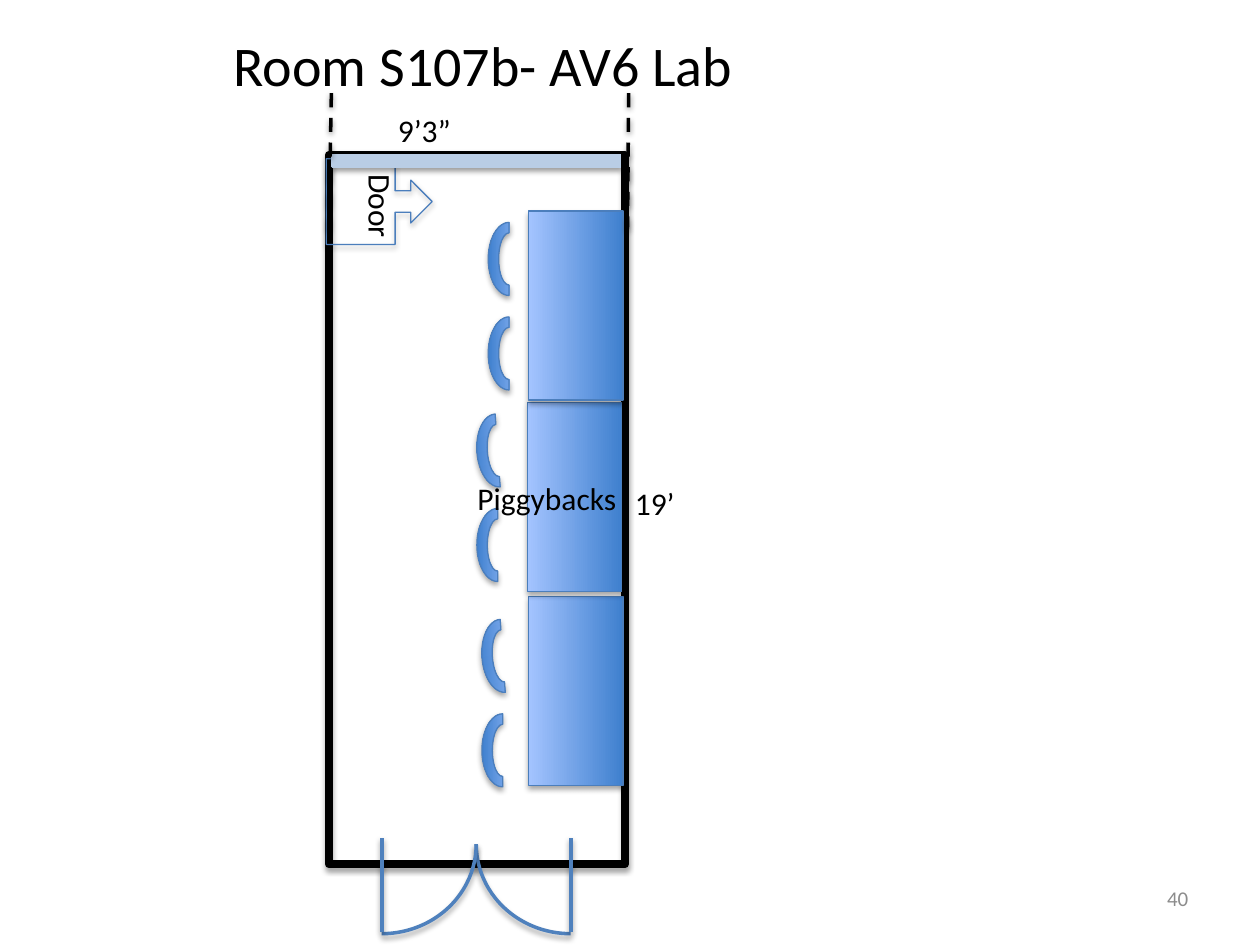
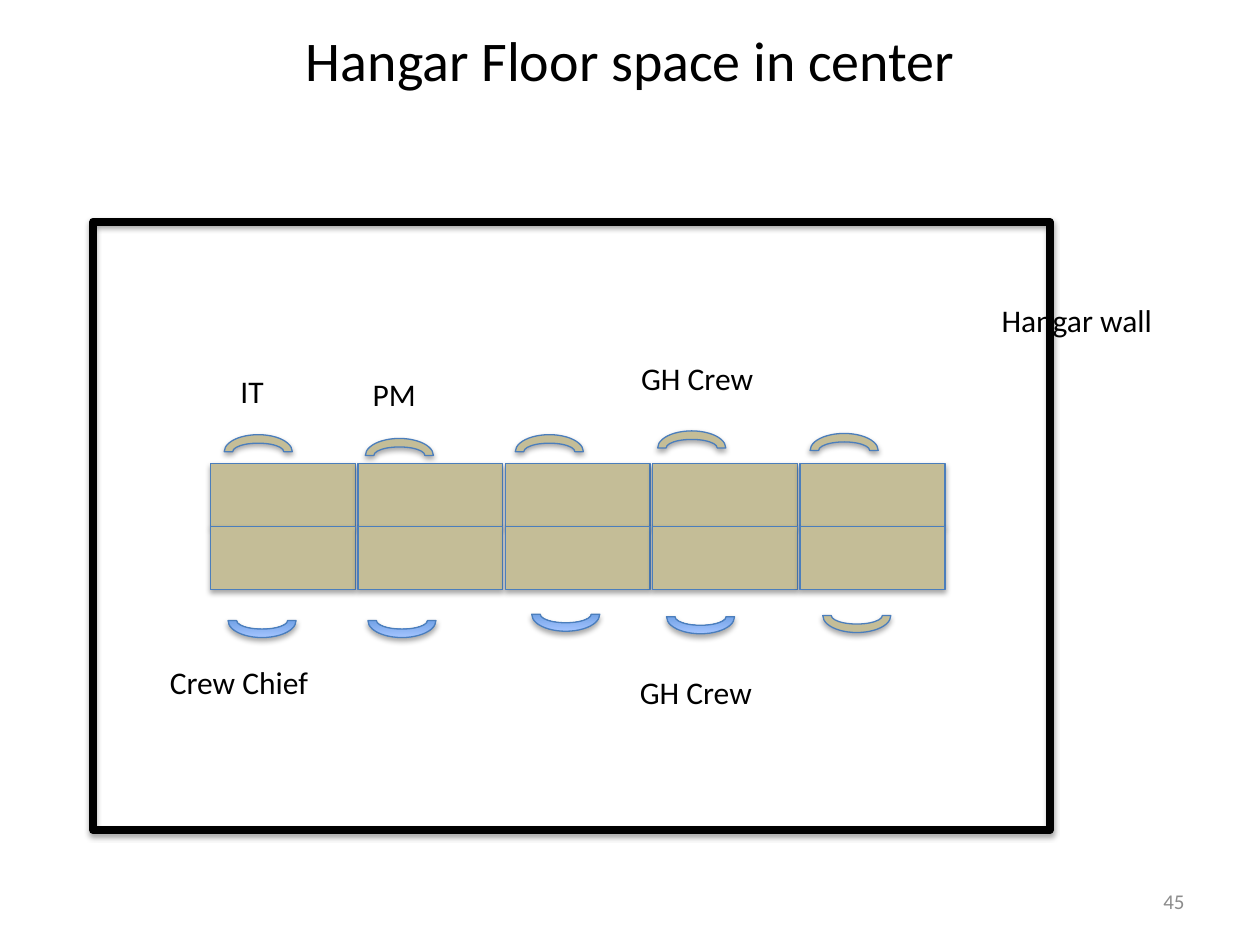
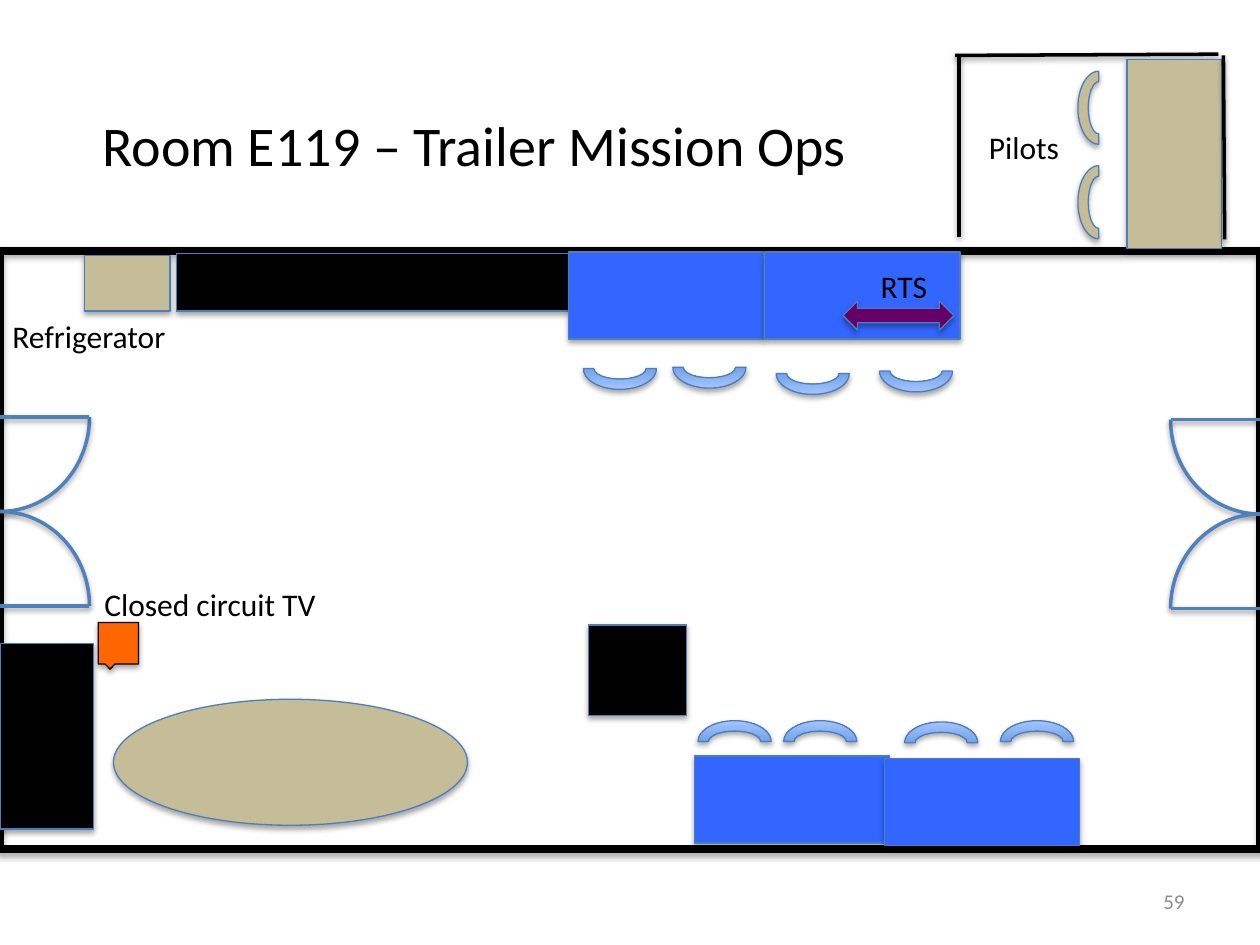
"""Build three floor-plan slides: AV6 lab, hangar floor and trailer mission ops."""
from collections import namedtuple

from lxml.etree import SubElement
from pptx import Presentation
from pptx.dml.color import RGBColor
from pptx.enum.dml import MSO_LINE
from pptx.enum.shapes import MSO_CONNECTOR, MSO_SHAPE
from pptx.enum.text import MSO_ANCHOR, MSO_AUTO_SIZE, PP_ALIGN
from pptx.oxml.ns import qn
from pptx.util import Pt

PX = 9144
FONT = "Calibri"
BLACK = RGBColor(0x00, 0x00, 0x00)
GREY = RGBColor(0x8C, 0x8C, 0x8C)
OUTLINE = RGBColor(0x4B, 0x7E, 0xBC)
DOOR_BLUE = RGBColor(0x4F, 0x81, 0xBD)
PALE_BLUE = RGBColor(0xB9, 0xCD, 0xE5)
DARK_BLUE = RGBColor(0x3F, 0x80, 0xCE)
LIGHT_BLUE = RGBColor(0xA4, 0xC4, 0xFF)
DESK_BLUE = RGBColor(0x33, 0x66, 0xFF)
TAN = RGBColor(0xC4, 0xBD, 0x97)
ORANGE = RGBColor(0xFF, 0x66, 0x00)
PURPLE = RGBColor(0x66, 0x00, 0x66)

Gradient = namedtuple("Gradient", "start end angle")
LIGHT_TOP = Gradient(DARK_BLUE, LIGHT_BLUE, 90)
DARK_TOP = Gradient(LIGHT_BLUE, DARK_BLUE, 90)

LARGE_CHAIR = (58, 33)
SMALL_CHAIR = (54, 27)
FACING_UP, FACING_DOWN, FACING_LEFT = 0, 180, 270
BOTTOM_RIGHT, BOTTOM_LEFT, TOP_LEFT, TOP_RIGHT = range(4)
QUARTER_TURN = 54


def scaled(*lengths):
    """Turn px lengths into EMU."""
    return [length * PX for length in lengths]


def cast_shadow(shape, alpha, distance):
    """Give a shape or connector a soft shadow below it."""
    effects = SubElement(shape._element.spPr, qn("a:effectLst"))
    shadow = SubElement(effects, qn("a:outerShdw"), blurRad="40000", dist=str(distance),
                        dir="5400000", rotWithShape="0")
    color = SubElement(shadow, qn("a:srgbClr"), val=str(BLACK))
    SubElement(color, qn("a:alpha"), val=str(alpha * 1000))


def paint(shape, fill):
    """Fill a shape with a colour, a gradient or nothing."""
    if fill is None:
        shape.fill.background()
    elif isinstance(fill, Gradient):
        shape.fill.gradient()
        shape.fill.gradient_angle = fill.angle
        for stop, color in zip(shape.fill.gradient_stops, fill):
            stop.color.rgb = color
    else:
        shape.fill.solid()
        shape.fill.fore_color.rgb = fill


def add_item(slide, box, fill=None, kind=MSO_SHAPE.RECTANGLE, turn=0, line=OUTLINE, weight=0.75):
    """Draw one preset shape with an outline and a shadow."""
    shape = slide.shapes.add_shape(kind, *scaled(*box))
    shape.rotation = turn
    paint(shape, fill)
    shape.line.color.rgb = line
    shape.line.width = Pt(weight)
    cast_shadow(shape, 35, 23000)
    return shape


def add_walls(slide, *box):
    """Draw the heavy outline of a room."""
    add_item(slide, box, line=BLACK, weight=4.5)


def add_chairs(slide, places, size, fill, turn):
    """Draw equal chairs at the given left and top places."""
    for place in places:
        add_item(slide, (*place, *size), fill, MSO_SHAPE.BLOCK_ARC, turn)


def add_line(slide, start, end, color=BLACK, weight=2, dash=None):
    """Draw a straight line with a shadow."""
    line = slide.shapes.add_connector(MSO_CONNECTOR.STRAIGHT, *scaled(*start, *end))
    line.line.color.rgb = color
    line.line.width = Pt(weight)
    if dash:
        line.line.dash_style = dash
    cast_shadow(line, 38, 20000)


def add_door_leaf(slide, box, quadrant, start, end):
    """Draw a door leaf and the quarter circle of its swing."""
    swing = add_item(slide, box, None, MSO_SHAPE.ARC, line=DOOR_BLUE, weight=2)
    swing.adjustments[0] = quadrant * QUARTER_TURN
    swing.adjustments[1] = (quadrant + 1) % 4 * QUARTER_TURN
    add_line(slide, start, end, DOOR_BLUE)


def add_text(slide, text, box, size, color=BLACK, align=PP_ALIGN.LEFT, wrap=True):
    """Place one paragraph of text and return its box."""
    shape = slide.shapes.add_textbox(*scaled(*box))
    frame = shape.text_frame
    frame.word_wrap = wrap
    paragraph = frame.paragraphs[0]
    paragraph.text = text
    paragraph.alignment = align
    paragraph.font.name = FONT
    paragraph.font.size = Pt(size)
    paragraph.font.color.rgb = color
    return shape


def add_label(slide, text, left, top, width, wrap=False, turn=0):
    """Name a part of the plan."""
    shape = add_text(slide, text, (left, top, width, 40), 18, wrap=wrap)
    shape.text_frame.auto_size = MSO_AUTO_SIZE.SHAPE_TO_FIT_TEXT
    shape.rotation = turn


def add_title(slide, text, *box):
    """Place the centred slide title."""
    shape = add_text(slide, text, box, 32, align=PP_ALIGN.CENTER)
    shape.text_frame.vertical_anchor = MSO_ANCHOR.MIDDLE


def add_page_number(slide, number, left=717, top=695):
    """Place the grey page number at the lower right."""
    shape = add_text(slide, number, (left, top, 233, 40), 12, GREY, PP_ALIGN.RIGHT)
    shape.text_frame.vertical_anchor = MSO_ANCHOR.MIDDLE


def build_lab(slide):
    """Draw the narrow lab with three desks along one wall."""
    add_title(slide, "Room S107b- AV6 Lab", 0, -10, 767, 122)
    add_walls(slide, 261, 123, 235, 563)
    for left, top in ((382, 511), (381, 357), (382, 205)):
        add_item(slide, (left, top, 150, 75), LIGHT_TOP, turn=FACING_LEFT)
    add_chairs(slide, ((366, 341), (370, 504)), LARGE_CHAIR, DARK_TOP, 266)
    add_chairs(slide, ((366, 416), (375, 189), (375, 264), (370, 579)),
               LARGE_CHAIR, DARK_TOP, FACING_LEFT)
    for hinge, quadrant in ((453, BOTTOM_LEFT), (303, BOTTOM_RIGHT)):
        add_door_leaf(slide, (hinge - 75, 599, 150, 142), quadrant, (hinge, 740), (hinge, 665))
    add_label(slide, "9’3”", 306, 83, 63)
    add_label(slide, "Piggybacks", 369, 375, 132)
    add_label(slide, "19’", 494, 379, 52)
    add_item(slide, (267, 118, 68, 84), None, MSO_SHAPE.UP_ARROW_CALLOUT, 90)
    add_label(slide, "Door", 267, 144, 71, turn=90)
    add_page_number(slide, "40", 720, 693)
    add_line(slide, (263, 128), (493, 128), PALE_BLUE, 8)
    for top_x, bottom_x in ((263, 261), (499, 498)):
        add_line(slide, (top_x, 74), (bottom_x, 182), dash=MSO_LINE.DASH)


def build_hangar(slide):
    """Draw the hangar with two rows of five desks."""
    add_title(slide, "Hangar Floor space in center", 88, 0, 825, 94)
    add_walls(slide, 74, 176, 759, 483)
    add_chairs(slide, ((178, 345), (290, 348), (409, 345), (522, 342), (643, 344)),
               SMALL_CHAIR, TAN, FACING_UP)
    for top in (368, 418):
        for column in range(5):
            add_item(slide, (167 + 117 * column, top, 115, 50), TAN)
    add_chairs(slide, ((181, 479), (292, 479), (422, 474), (529, 476)),
               SMALL_CHAIR, LIGHT_TOP, FACING_DOWN)
    add_chairs(slide, ((653, 475),), SMALL_CHAIR, TAN, FACING_DOWN)
    add_label(slide, "IT", 181, 290, 69, wrap=True)
    add_label(slide, "PM", 286, 293, 85, wrap=True)
    add_label(slide, "GH Crew", 499, 280, 206, wrap=True)
    add_label(slide, "GH Crew", 498, 529, 206, wrap=True)
    add_label(slide, "Crew Chief", 125, 521, 132)
    add_label(slide, "Hangar wall", 785, 234, 141)
    add_page_number(slide, "45")


def build_trailer(slide):
    """Draw the trailer with its pilots' corner, desks and double doors."""
    add_title(slide, "Room E119 – Trailer Mission Ops", 0, 52, 753, 124)
    add_walls(slide, 0, 199, 1000, 475)
    for hinge_y, right_quadrant, left_quadrant in ((333, BOTTOM_LEFT, BOTTOM_RIGHT),
                                                   (483, TOP_LEFT, TOP_RIGHT)):
        add_door_leaf(slide, (929, hinge_y - 75, 142, 150), right_quadrant,
                      (929, hinge_y), (1004, hinge_y))
        add_door_leaf(slide, (-71, hinge_y - 77, 142, 150), left_quadrant,
                      (71, hinge_y - 2), (-4, hinge_y - 2))
    add_line(slide, (967, 43), (758, 44))
    add_chairs(slide, ((843, 144), (843, 69)), LARGE_CHAIR, TAN, FACING_LEFT)
    add_item(slide, (857, 85, 150, 75), TAN, turn=90)
    add_label(slide, "Pilots", 775, 97, 76)
    add_line(slide, (972, 190), (971, 44))
    add_line(slide, (761, 188), (761, 43))
    for box in ((467, 496, 78, 72), (140, 201, 311, 46), (0, 511, 74, 147)):
        add_item(slide, box, BLACK)
    add_item(slide, (90, 555, 281, 100), TAN, MSO_SHAPE.OVAL)
    add_item(slide, (67, 203, 68, 44), TAN)
    add_label(slide, "Refrigerator", 0, 247, 145)
    add_item(slide, (78, 494, 32, 33), ORANGE, MSO_SHAPE.RECTANGULAR_CALLOUT, line=BLACK)
    add_label(slide, "Closed circuit TV", 73, 459, 190)
    for left, top in ((551, 600), (702, 602), (451, 200), (607, 200)):
        add_item(slide, (left, top, 155, 69), DESK_BLUE)
    add_chairs(slide, ((554, 572), (622, 572), (718, 573), (794, 572)),
               LARGE_CHAIR, LIGHT_TOP, FACING_UP)
    add_chairs(slide, ((463, 276), (534, 275), (616, 280), (698, 278)),
               LARGE_CHAIR, LIGHT_TOP, FACING_DOWN)
    add_item(slide, (669, 239, 88, 23), PURPLE, MSO_SHAPE.LEFT_RIGHT_ARROW)
    add_label(slide, "RTS", 689, 207, 58)
    add_page_number(slide, "59")


def main():
    """Build and save the presentation."""
    presentation = Presentation()
    presentation.slide_width, presentation.slide_height = scaled(1000, 750)
    blank = presentation.slide_layouts[6]
    for build in (build_lab, build_hangar, build_trailer):
        build(presentation.slides.add_slide(blank))
    presentation.save("out.pptx")


if __name__ == "__main__":
    main()
